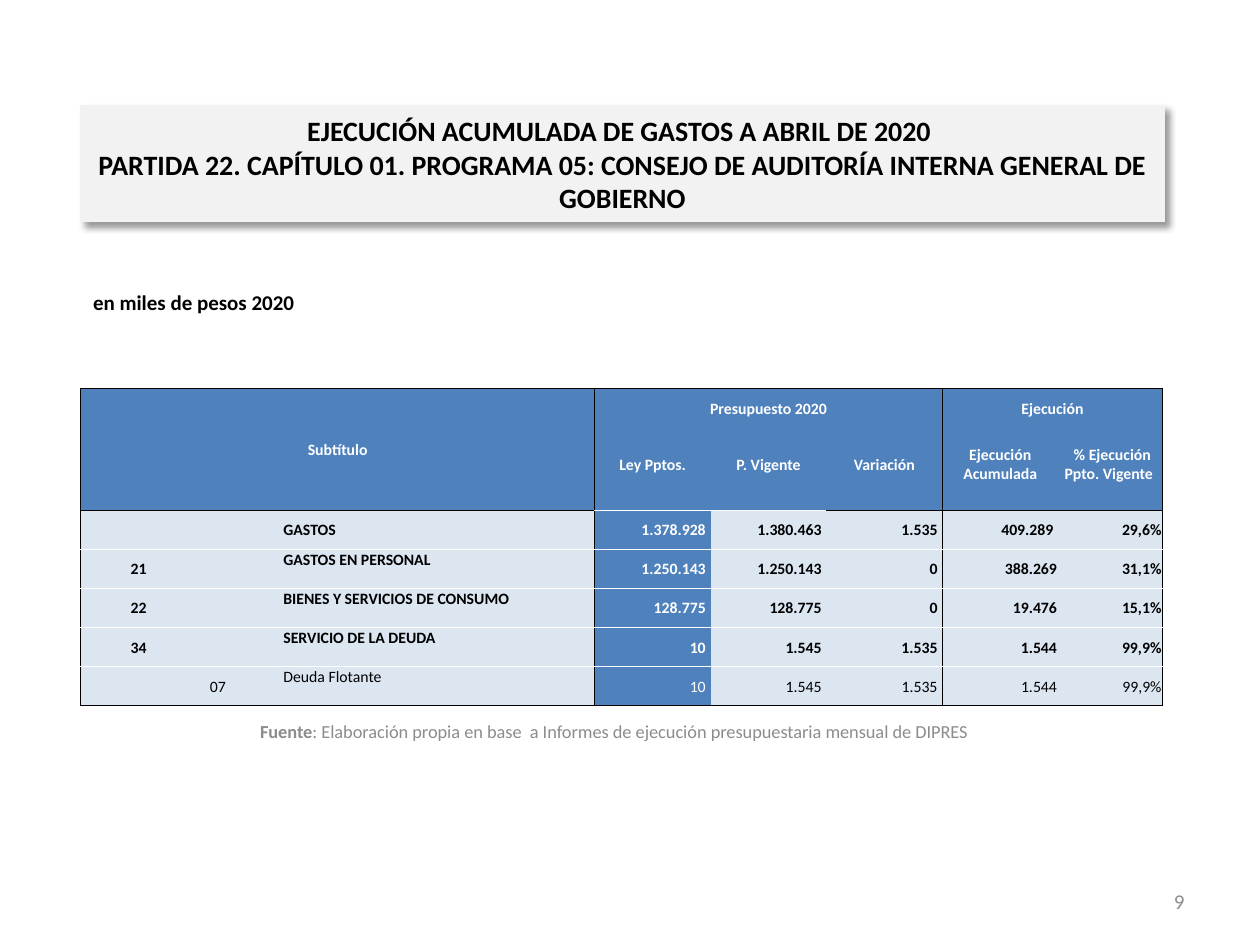
from typing import NamedTuple

import lxml.etree
import pptx
import pptx.dml.color
import pptx.enum.shapes
import pptx.enum.text
import pptx.oxml
import pptx.oxml.ns
import pptx.util

Inches = pptx.util.Inches
Color = pptx.dml.color.RGBColor
Align = pptx.enum.text.PP_ALIGN
Anchor = pptx.enum.text.MSO_ANCHOR

BLACK = Color(0x00, 0x00, 0x00)
WHITE = Color(0xFF, 0xFF, 0xFF)
GREY = Color(0x8C, 0x8C, 0x8C)
PANEL = Color(0xF2, 0xF2, 0xF2)
BLUE = Color(0x4F, 0x81, 0xBD)
PALE = Color(0xDC, 0xE6, 0xF1)

LEFT, WIDTH = 0.64, 8.6
COLS = [0.92, 0.34, 0.34, 2.48, 0.92, 0.92, 0.92, 0.92, 0.83]
ROWS = [0.24, 0.73] + [0.31] * 5
LAW = 4


class Head(NamedTuple):
    row: int
    col: int
    text: str
    high: int = 1
    wide: int = 1
    anchor: Anchor = Anchor.MIDDLE


class Line(NamedTuple):
    code: str
    item: str
    name: str
    sums: tuple[str, ...]
    bold: bool = True
    anchor: Anchor = Anchor.TOP


class Label(NamedTuple):
    text: str
    top: float
    height: float
    size: float
    left: float = LEFT
    width: float = WIDTH
    color: Color = GREY
    align: Align = Align.LEFT
    anchor: Anchor = Anchor.MIDDLE
    bold: bool = False
    lead: str = ""


HEADS = [
    Head(0, 0, "Subtítulo", high=2, wide=4),
    Head(0, 4, "Presupuesto 2020", wide=3, anchor=Anchor.BOTTOM),
    Head(0, 7, "Ejecución", wide=2, anchor=Anchor.BOTTOM),
    Head(1, 4, "Ley Pptos."),
    Head(1, 5, "P. Vigente"),
    Head(1, 6, "Variación"),
    Head(1, 7, "Ejecución Acumulada"),
    Head(1, 8, " % Ejecución Ppto. Vigente "),
]

LINES = [
    Line("", "", "GASTOS",
         ("1.378.928 ", "1.380.463 ", "1.535 ", "409.289 ", "29,6%"),
         anchor=Anchor.MIDDLE),
    Line("21", "", "GASTOS EN PERSONAL",
         ("1.250.143 ", "1.250.143 ", "0 ", "388.269", "31,1%")),
    Line("22", "", "BIENES Y SERVICIOS DE CONSUMO",
         ("128.775 ", "128.775 ", "0 ", "19.476", "15,1%")),
    Line("34", "", "SERVICIO DE LA DEUDA",
         ("10 ", "1.545 ", "1.535 ", "1.544", "99,9%")),
    Line("", "07", "Deuda Flotante",
         ("10 ", "1.545 ", "1.535 ", "1.544", "99,9%"), bold=False),
]

LABELS = [
    Label(": Elaboración propia en base  a Informes de ejecución presupuestaria"
          " mensual de DIPRES", 5.56, 0.48, 10.5, width=8.47,
          align=Align.CENTER, lead="Fuente"),
    Label("9", 6.95, 0.4, 12, left=7.17, width=2.33, align=Align.RIGHT),
    Label("en miles de pesos 2020", 2.25, 0.33, 12, color=BLACK,
          anchor=Anchor.TOP, bold=True),
]

TITLE = ("EJECUCIÓN ACUMULADA DE GASTOS A ABRIL DE 2020 \v"
         "PARTIDA 22. CAPÍTULO 01. PROGRAMA 05: CONSEJO DE AUDITORÍA "
         "INTERNA GENERAL DE GOBIERNO")


def write(frame, text: str, *, size: float, color: Color, bold: bool = False,
          align: Align = Align.LEFT, lead: str = "") -> None:
    para = frame.paragraphs[0]
    para.alignment = align
    para.text = lead or text
    if lead:
        para.add_run().text = text
    for i, run in enumerate(para.runs):
        run.font.name = "Calibri"
        run.font.size = pptx.util.Pt(size)
        run.font.color.rgb = color
        run.font.bold = bold or (bool(lead) and i == 0)


def add_label(slide, label: Label) -> None:
    box = slide.shapes.add_textbox(Inches(label.left), Inches(label.top),
                                   Inches(label.width), Inches(label.height))
    box.text_frame.word_wrap = True
    box.text_frame.vertical_anchor = label.anchor
    write(box.text_frame, label.text, size=label.size, color=label.color,
          bold=label.bold, align=label.align, lead=label.lead)


def add_title(slide) -> None:
    box = slide.shapes.add_shape(pptx.enum.shapes.MSO_SHAPE.RECTANGLE,
                                 Inches(LEFT), Inches(0.84), Inches(WIDTH), Inches(0.92))
    box.fill.solid()
    box.fill.fore_color.rgb = PANEL
    box.line.color.rgb = PANEL
    box.line.width = pptx.util.Pt(0.75)
    box.shadow.inherit = False
    glow = pptx.oxml.parse_xml(
        f'<a:outerShdw {pptx.oxml.ns.nsdecls("a")} blurRad="50800" dist="38100" '
        'dir="2700000" algn="tl" rotWithShape="0"><a:srgbClr val="000000">'
        '<a:alpha val="40000"/></a:srgbClr></a:outerShdw>')
    box.element.spPr.find(pptx.oxml.ns.qn("a:effectLst")).append(glow)
    box.text_frame.word_wrap = True
    box.text_frame.vertical_anchor = Anchor.MIDDLE
    write(box.text_frame, TITLE, size=16, color=BLACK, bold=True, align=Align.CENTER)


def side(col: int) -> Color | None:
    return BLACK if col in (0, 4, 7, 9) else None


def rule(row: int, col: int) -> Color | None:
    if row == 1:
        return None
    if row in (0, len(ROWS)) or (row == 2 and col not in (4, 5)):
        return BLACK
    return WHITE


def edge(cell, tag: str, color: Color | None) -> None:
    props = cell._tc.get_or_add_tcPr()
    line = lxml.etree.SubElement(props, pptx.oxml.ns.qn(f"a:{tag}"), w="6350")
    kind = "solidFill" if color is not None else "noFill"
    fill = lxml.etree.SubElement(line, pptx.oxml.ns.qn(f"a:{kind}"))
    if color is not None:
        lxml.etree.SubElement(fill, pptx.oxml.ns.qn("a:srgbClr"), val=str(color))


def set_cell(table, head: Head, fill: Color, color: Color, align: Align, bold: bool) -> None:
    row, col = head.row, head.col
    cell = table.cell(row, col)
    if head.high * head.wide > 1:
        cell.merge(table.cell(row + head.high - 1, col + head.wide - 1))
    cell.margin_left = cell.margin_right = cell.margin_top = Inches(0.01)
    cell.margin_bottom = 0
    cell.vertical_anchor = head.anchor
    edge(cell, "lnL", side(col))
    edge(cell, "lnR", side(col + head.wide))
    edge(cell, "lnT", rule(row, col))
    edge(cell, "lnB", rule(row + head.high, col))
    cell.fill.solid()
    cell.fill.fore_color.rgb = fill
    write(cell.text_frame, head.text, size=9, color=color, bold=bold, align=align)


def add_grid(slide) -> None:
    table = slide.shapes.add_table(len(ROWS), len(COLS), Inches(LEFT), Inches(3.08),
                                   Inches(WIDTH), Inches(sum(ROWS))).table
    for col, width in zip(table.columns, COLS):
        col.width = Inches(width)
    for row, height in zip(table.rows, ROWS):
        row.height = Inches(height)
    for head in HEADS:
        set_cell(table, head, BLUE, WHITE, Align.CENTER, True)
    aligns = [Align.CENTER] * 3 + [Align.JUSTIFY] + [Align.RIGHT] * 5
    for row, line in enumerate(LINES, 2):
        texts = (line.code, line.item, "", line.name, *line.sums)
        for col, (text, align) in enumerate(zip(texts, aligns)):
            anchor = line.anchor if col == 3 else Anchor.MIDDLE
            fill, color = (BLUE, WHITE) if col == LAW else (PALE, BLACK)
            set_cell(table, Head(row, col, text, anchor=anchor), fill, color,
                     align, line.bold)


def main() -> None:
    deck = pptx.Presentation()
    deck.slide_width, deck.slide_height = Inches(10), Inches(7.5)
    slide = deck.slides.add_slide(deck.slide_layouts[6])
    for label in LABELS:
        add_label(slide, label)
    add_title(slide)
    add_grid(slide)
    deck.save("out.pptx")


if __name__ == "__main__":
    main()
